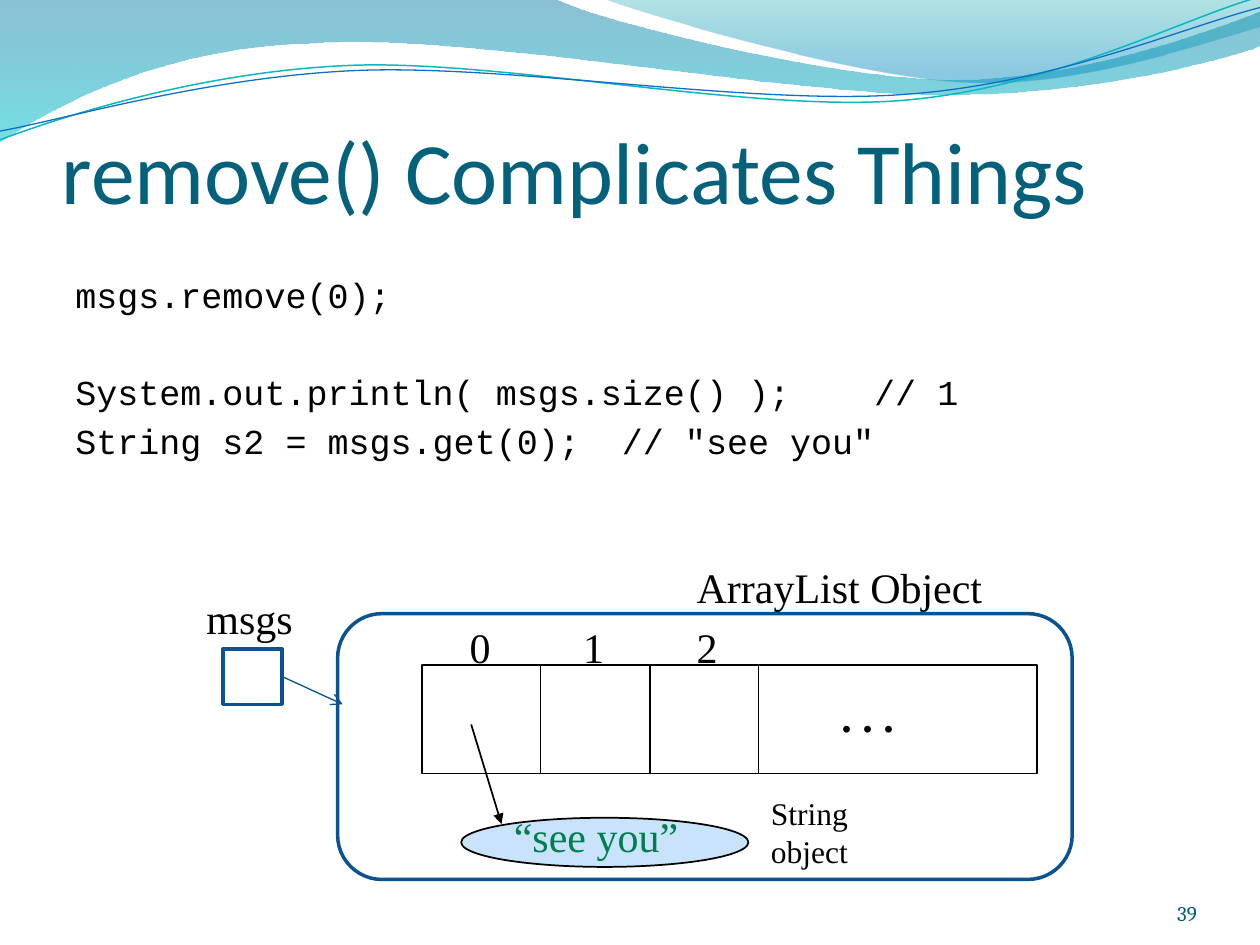
from lxml import etree
from pptx import Presentation
from pptx.dml.color import RGBColor
from pptx.enum.shapes import MSO_CONNECTOR, MSO_SHAPE
from pptx.enum.text import MSO_ANCHOR, MSO_AUTO_SIZE, PP_ALIGN
from pptx.oxml.ns import qn
from pptx.util import Inches, Pt

STRAIGHT = MSO_CONNECTOR.STRAIGHT
RECTANGLE, ROUNDED, OVAL = MSO_SHAPE.RECTANGLE, MSO_SHAPE.ROUNDED_RECTANGLE, MSO_SHAPE.OVAL
BOTTOM = MSO_ANCHOR.BOTTOM
NO_AUTOFIT = MSO_AUTO_SIZE.NONE
LEFT, RIGHT = PP_ALIGN.LEFT, PP_ALIGN.RIGHT

BLACK = RGBColor(0x00, 0x00, 0x00)
TITLE_TEAL = RGBColor(0x04, 0x61, 0x7B)
NUMBER_TEAL = RGBColor(0x04, 0x5D, 0x75)
STRING_GREEN = RGBColor(0x00, 0x7E, 0x4F)
STRING_FILL = RGBColor(0xC8, 0xE3, 0xFB)
BOX_BLUE = RGBColor(0x0B, 0x52, 0x92)
ARROW_BLUE = RGBColor(0x09, 0x52, 0x95)
CURVE_TEAL = RGBColor(0x0A, 0xB8, 0xBF)
CURVE_BLUE = RGBColor(0x0F, 0x6F, 0xC6)
WAVE_BLUE = RGBColor(0x00, 0x74, 0xA1)
WAVE_CYAN = RGBColor(0x00, 0xC6, 0xCF)
CREST_TEAL = RGBColor(0x00, 0xA1, 0xA9)
CREST_BLUE = RGBColor(0x00, 0x8B, 0xBF)

SERIF, MONO = "Times New Roman", "Courier New"

WAVE = [(0, 0), (4.4, -0.01), (4.76, 0.17, 6.64, 0.63, 7.58, 0.63),
        (8.53, 0.63, 9.58, 0.26, 10, 0.09), (10.01, 0.36),
        (9.83, 0.44, 8.7, 0.76, 7.46, 0.75), (6.22, 0.75, 3.82, 0.28, 2.57, 0.34),
        (1.29, 0.36, 0.46, 0.83, -0.01, 1.13), (0, 0)]
CREST = [(4.79, -0.01), (5.09, 0.11, 6.82, 0.62, 7.69, 0.65),
         (8.56, 0.69, 9.61, 0.32, 10, 0.21), (10, 0), (4.79, -0.01)]
TEAL_CURVE = [(0, 1.11), (0.48, 0.93, 1.58, 0.57, 2.77, 0.52),
              (3.95, 0.47, 5.93, 0.89, 7.13, 0.8), (8.33, 0.71, 9.38, 0.15, 9.98, -0.02)]
BLUE_CURVE = [(0, 1.04), (0.47, 0.96, 1.64, 0.61, 2.83, 0.56),
              (4.03, 0.51, 5.97, 0.84, 7.17, 0.75), (8.36, 0.67, 9.41, 0.21, 10, 0.06)]


def add_outline(slide, segments, close):
    """Draw a freeform whose six-number segments are cubic curves."""
    points = [(Inches(segment[i]), Inches(segment[i + 1]))
              for segment in segments for i in range(0, len(segment), 2)]
    builder = slide.shapes.build_freeform(*points[0])
    builder.add_line_segments(points[1:], close=close)
    shape = builder.convert_to_shape()
    shape.shadow.inherit = False
    lines = iter(list(shape._element.iter(qn("a:lnTo"))))
    for segment in segments[1:]:
        line = next(lines)
        if len(segment) == 6:
            line.tag = qn("a:cubicBezTo")
            for _ in range(2):
                extra = next(lines)
                line.append(extra[0])
                extra.getparent().remove(extra)
    return shape


def add_wave(slide, segments, stops):
    """Add a closed wave with a translucent downward gradient."""
    shape = add_outline(slide, segments, True)
    shape.line.fill.background()
    shape.fill.gradient()
    shape.fill.gradient_angle = 270
    for stop, (position, color, _) in zip(shape.fill.gradient_stops, stops):
        stop.position = position
        stop.color.rgb = color
    colors = shape._element.spPr.find(qn("a:gradFill")).iter(qn("a:srgbClr"))
    for color, (_, _, opacity) in zip(colors, stops):
        etree.SubElement(color, qn("a:alpha"), val=str(opacity * 1000))


def add_curve(slide, segments, color, width):
    """Add an open curved line."""
    shape = add_outline(slide, segments, False)
    shape.fill.background()
    shape.line.color.rgb = color
    shape.line.width = Pt(width)


def add_box(slide, kind, box, color, width, fill=None):
    """Add an outlined preset shape."""
    shape = slide.shapes.add_shape(kind, *map(Inches, box))
    shape.shadow.inherit = False
    if fill is None:
        shape.fill.background()
    else:
        shape.fill.solid()
        shape.fill.fore_color.rgb = fill
    shape.line.color.rgb = color
    shape.line.width = Pt(width)
    return shape


def add_line(slide, start, end, color=BLACK, width=1, head=None):
    """Add a straight line, with an arrowhead at its end if named."""
    line = slide.shapes.add_connector(STRAIGHT, *map(Inches, start + end))
    line.line.color.rgb = color
    line.line.width = Pt(width)
    if head:
        etree.SubElement(line.line._get_or_add_ln(), qn("a:tailEnd"), type=head)
    etree.SubElement(line._element.spPr, qn("a:effectLst"))
    return line


def format_text(text_frame, size, font, color, bold=False):
    """Apply one font to every run."""
    for paragraph in text_frame.paragraphs:
        for run in paragraph.runs:
            run.font.size = Pt(size)
            run.font.name = font
            run.font.color.rgb = color
            run.font.bold = bold


def add_text(slide, box, text, size=24, font=SERIF, color=BLACK, bold=False, wrap=False):
    """Add a text box and return its text frame."""
    text_frame = slide.shapes.add_textbox(*map(Inches, box)).text_frame
    text_frame.word_wrap = wrap
    text_frame.text = text
    format_text(text_frame, size, font, color, bold)
    return text_frame


def set_flush(text_frame, alignment):
    """Seat text at the bottom of its frame without side insets."""
    text_frame.auto_size = NO_AUTOFIT
    text_frame.vertical_anchor = BOTTOM
    text_frame.margin_left = text_frame.margin_right = text_frame.margin_bottom = 0
    text_frame.paragraphs[0].alignment = alignment


def add_title(slide):
    """Place and format the title."""
    title = slide.shapes.title
    title.left, title.top, title.width, title.height = map(Inches, (0.49, 0.51, 9, 1.25))
    title.text_frame.text = "remove() Complicates Things"
    format_text(title.text_frame, 50, "Calibri", TITLE_TEAL)
    set_flush(title.text_frame, LEFT)


def add_code(slide):
    """Add the code lines, with a gap after the first."""
    lines = ["msgs.remove(0);", "System.out.println( msgs.size() );    // 1",
             'String s2 = msgs.get(0);  // "see you"']
    code = add_text(slide, (0.5, 2.12, 9, 1.87), "\n".join(lines), 20, MONO, wrap=True)
    for paragraph, space in zip(code.paragraphs, (4, 31.5, 4)):
        paragraph.space_before = Pt(space)


def add_list_diagram(slide):
    """Draw the list object, its cells and its references."""
    add_box(slide, RECTANGLE, (3.35, 5.28, 4.88, 0.86), BLACK, 1)
    for divider in (4.29, 5.16, 6.02):
        add_line(slide, (divider, 5.28), (divider, 6.14))
    add_text(slide, (1.54, 4.65, 0.89, 0.5), "msgs")
    add_text(slide, (6.58, 5.43, 0.62, 0.5), ". . .", bold=True)
    add_box(slide, OVAL, (3.66, 6.49, 2.28, 0.39), BLACK, 1, STRING_FILL)
    add_text(slide, (3.98, 6.38, 1.6, 0.5), "“see you”", color=STRING_GREEN, wrap=True)
    add_line(slide, (3.74, 5.75), (3.98, 6.54), head="triangle")
    variable = add_box(slide, RECTANGLE, (1.77, 5.15, 0.47, 0.44), BOX_BLUE, 2)
    reference = add_line(slide, (2.24, 5.37), (2.72, 5.59), ARROW_BLUE, 0.75, "arrow")
    reference.begin_connect(variable, 3)
    add_text(slide, (5.43, 4.41, 2.49, 0.5), "ArrayList Object")
    add_text(slide, (6.02, 6.25, 0.82, 0.71), "String\nobject", 18)
    for index in range(3):
        add_text(slide, (3.63 + 0.9 * index, 4.88, 0.37, 0.5), str(index))
    add_box(slide, ROUNDED, (2.68, 4.87, 5.83, 2.11), BOX_BLUE, 2)


def main():
    """Build and save the slide."""
    presentation = Presentation()
    presentation.slide_width, presentation.slide_height = Inches(10), Inches(7.5)
    slide = presentation.slides.add_slide(presentation.slide_layouts[5])
    add_wave(slide, WAVE, [(0, WAVE_BLUE, 45), (1, WAVE_CYAN, 55)])
    add_wave(slide, CREST, [(0, CREST_TEAL, 30), (0.8, CREST_BLUE, 45)])
    add_curve(slide, TEAL_CURVE, CURVE_TEAL, 0.85)
    add_curve(slide, BLUE_CURVE, CURVE_BLUE, 0.75)
    add_title(slide)
    add_code(slide)
    number = add_text(slide, (8.67, 6.95, 0.83, 0.4), "39", 12, "Cambria", NUMBER_TEAL, wrap=True)
    set_flush(number, RIGHT)
    add_list_diagram(slide)
    presentation.save("out.pptx")


if __name__ == "__main__":
    main()
